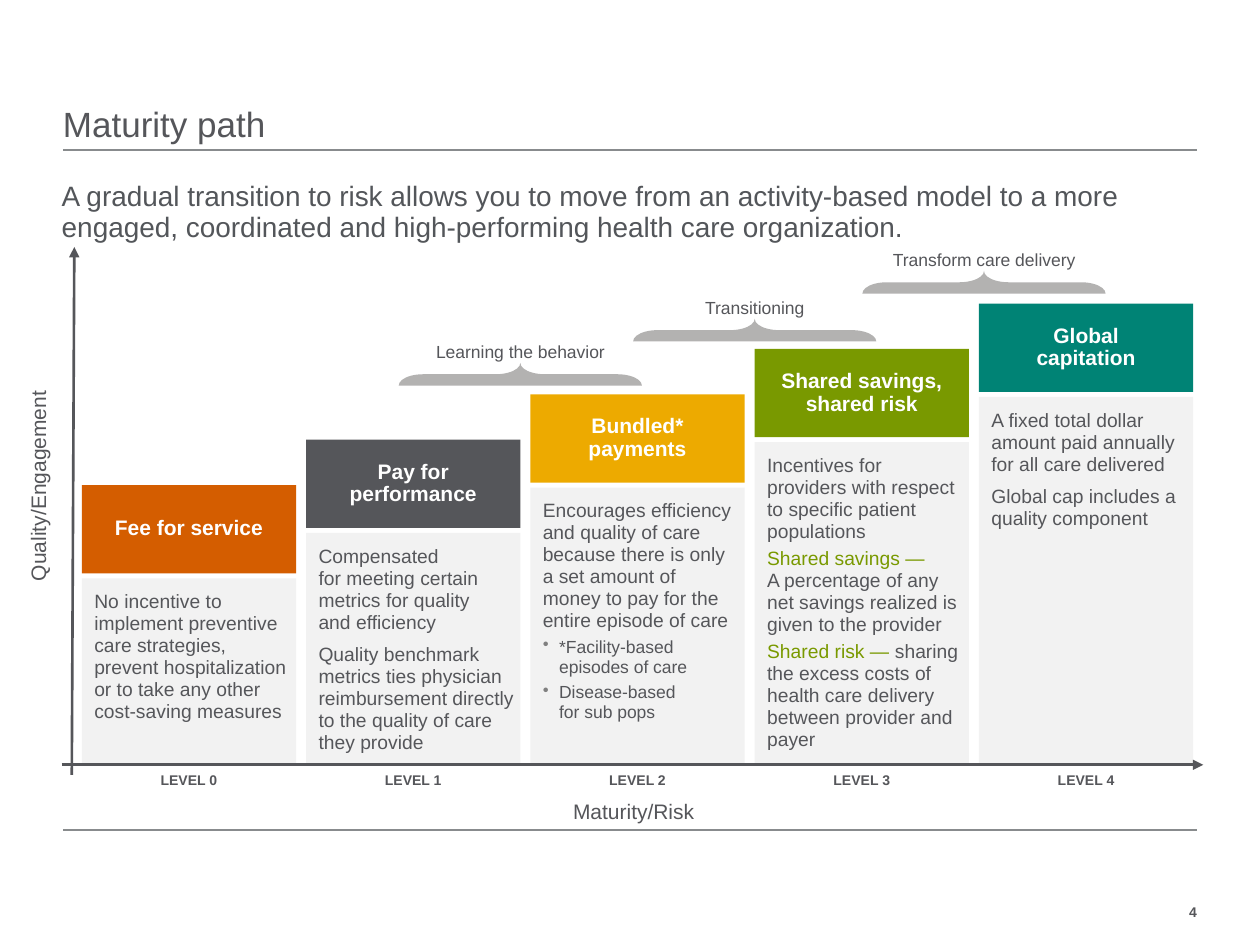
from pptx import Presentation
from pptx.dml.color import RGBColor
from pptx.enum.shapes import MSO_CONNECTOR as Connector, MSO_SHAPE as Preset
from pptx.enum.text import MSO_ANCHOR as Anchor, PP_ALIGN as Align
from pptx.oxml.ns import qn
from pptx.util import Inches, Pt
from lxml.etree import SubElement

FONT = "Arial"
INK, RULE, PANEL, BRACE, WHITE = "55565A", "888B8D", "F2F2F2", "B3B2B1", "FFFFFF"
BULLET, GREEN = "808080", "799900"

TITLE = "Maturity path"
LEAD = ("A gradual transition to risk allows you to move from an activity-based model "
        "to a more engaged, coordinated and high-performing health care organization.")

# heading lines, colour, body paragraphs as (text, space before, options)
STEPS = [
    (["Fee for service"], "D45D00", [
        ("No incentive to implement preventive care strategies, prevent hospitalization "
         "or to take any other cost-saving measures", 0, {})]),
    (["Pay for performance"], INK, [
        ("Compensated \nfor meeting certain metrics for quality \nand efficiency", 0, {}),
        ("Quality benchmark metrics ties physician reimbursement directly "
         "to the quality of care they provide", 6, {})]),
    (["Bundled* payments"], "EDAA00", [
        ("Encourages efficiency and quality of care because there is only a set amount "
         "of money to pay for the entire episode of care", 0, {}),
        ("*Facility-based episodes of care", 3, {"bullet": True}),
        ("Disease-based \nfor sub pops", 3, {"bullet": True})]),
    (["Shared savings,", "shared risk"], GREEN, [
        ("Incentives for providers with respect to specific patient populations", 0, {}),
        ("\nA percentage of any net savings realized is given to the provider", 3,
         {"lead": "Shared savings — "}),
        ("sharing the excess costs of health care delivery between provider and payer", 3,
         {"lead": "Shared risk — "})]),
    (["Global", "capitation"], "008375", [
        ("A fixed total dollar amount paid annually for all care delivered", 0, {}),
        ("Global cap includes a quality component", 6, {})]),
]
# label, centre of the brace
PHASES = [("Learning the behavior", 4.13, 2.97),
          ("Transitioning", 5.99, 2.62),
          ("Transform care delivery", 7.81, 2.24)]

LEFT, PITCH, WIDTH = 0.65, 1.78, 1.7
FIRST_TOP, RISE, HEAD_HEIGHT, GAP = 3.85, 0.36, 0.7, 0.04
BASE = 6.07
BRACE_LENGTH, BRACE_DEPTH = 1.93, 0.18


def rgb(value):
    return RGBColor.from_string(value)


def style(paragraph, size, color=INK, bold=False, align=Align.LEFT, spacing=1.0):
    paragraph.alignment = align
    paragraph.line_spacing = spacing
    font = paragraph.font
    font.name, font.size, font.bold = FONT, Pt(size), bold
    font.color.rgb = rgb(color)


def set_frame(shape, insets, anchor=Anchor.TOP, wrap=True):
    frame = shape.text_frame
    frame.word_wrap = wrap
    frame.vertical_anchor = anchor
    (frame.margin_left, frame.margin_top,
     frame.margin_right, frame.margin_bottom) = map(Inches, insets)
    return frame


def add_text(slide, box, lines, size, insets=(0, 0, 0, 0), anchor=Anchor.TOP, wrap=True, **look):
    shape = slide.shapes.add_textbox(*map(Inches, box))
    write_lines(set_frame(shape, insets, anchor, wrap), lines, size, **look)
    return shape


def write_lines(frame, lines, size, **look):
    for index, line in enumerate(lines):
        paragraph = frame.add_paragraph() if index else frame.paragraphs[0]
        paragraph.text = line
        style(paragraph, size, **look)


def add_block(slide, preset, box, fill):
    shape = slide.shapes.add_shape(preset, *map(Inches, box))
    shape.shadow.inherit = False
    shape.fill.solid()
    shape.fill.fore_color.rgb = rgb(fill)
    shape.line.fill.background()
    return shape


def add_line(slide, start, end, color, width, arrow=False):
    line = slide.shapes.add_connector(Connector.STRAIGHT, *map(Inches, start + end))
    line.line.color.rgb = rgb(color)
    line.line.width = Pt(width)
    properties = line._element.spPr
    if arrow:
        SubElement(properties.find(qn("a:ln")), qn("a:tailEnd"), type="triangle")
    SubElement(properties, qn("a:effectLst"))


def add_bullet(paragraph):
    properties = paragraph._p.get_or_add_pPr()
    indent = Inches(0.13)
    properties.set("marL", str(indent))
    properties.set("indent", str(-indent))
    color = SubElement(properties, qn("a:buClr"))
    SubElement(color, qn("a:srgbClr"), val=BULLET)
    SubElement(properties, qn("a:buChar"), char="•")


def write_body(frame, body):
    for index, (text, before, options) in enumerate(body):
        paragraph = frame.add_paragraph() if index else frame.paragraphs[0]
        bulleted = "bullet" in options
        if bulleted:
            add_bullet(paragraph)
        if "lead" in options:
            run = paragraph.add_run()
            run.text = options["lead"]
            run.font.color.rgb = rgb(GREEN)
        for number, line in enumerate(text.split("\n")):
            if number:
                paragraph.add_line_break()
            if line:
                paragraph.add_run().text = line
        paragraph.space_before = Pt(before)
        style(paragraph, 10 if bulleted else 11, spacing=0.95)


def add_step(slide, level, heading, color, body):
    left = LEFT + level * PITCH
    top = FIRST_TOP - level * RISE
    panel_top = top + HEAD_HEIGHT + GAP

    panel = add_block(slide, Preset.RECTANGLE, (left, panel_top, WIDTH, BASE - panel_top), PANEL)
    write_body(set_frame(panel, (0.1, 0.1, 0.05, 0)), body)

    head = add_block(slide, Preset.ROUNDED_RECTANGLE, (left, top, WIDTH, HEAD_HEIGHT), color)
    head.adjustments[0] = 0
    write_lines(set_frame(head, (0.1, 0, 0.1, 0), Anchor.MIDDLE), heading, 12,
                color=WHITE, bold=True, align=Align.CENTER, spacing=0.9)

    add_text(slide, (left, BASE, WIDTH, 0.25), [f"LEVEL {level}"], 8,
             insets=(0, 0.05, 0, 0), bold=True, align=Align.CENTER)


def add_phase(slide, label, center, middle):
    brace = add_block(slide, Preset.RIGHT_BRACE,
                      (center - BRACE_DEPTH / 2, middle - BRACE_LENGTH / 2,
                       BRACE_DEPTH, BRACE_LENGTH), BRACE)
    brace.rotation = 270
    brace.adjustments[0], brace.adjustments[1] = 1.08, 0.5
    add_text(slide, (center - BRACE_LENGTH / 2, middle - 0.31, BRACE_LENGTH, 0.27), [label], 10,
             insets=(0.1, 0.05, 0.1, 0.05), align=Align.CENTER)


def main():
    presentation = Presentation()
    presentation.slide_width, presentation.slide_height = Inches(10), Inches(7.5)
    slide = presentation.slides.add_slide(presentation.slide_layouts[6])

    add_text(slide, (9, 7.12, 0.5, 0.23), ["4"], 8, anchor=Anchor.MIDDLE,
             bold=True, align=Align.RIGHT)
    for height in (1.19, 6.59):
        add_line(slide, (0.5, height), (9.5, height), RULE, 1)
    add_text(slide, (0.5, 0.78, 9, 0.44), [TITLE], 20, anchor=Anchor.MIDDLE, spacing=0.9)
    add_text(slide, (0.49, 1.45, 9, 0.59), [LEAD], 16, color="53565A", spacing=0.9)

    for level, step in enumerate(STEPS):
        add_step(slide, level, *step)
    for phase in PHASES:
        add_phase(slide, *phase)

    padding = (0.1, 0.05, 0.1, 0.05)
    add_text(slide, (4.21, 6.29, 1.64, 0.3), ["Maturity/Risk"], 12,
             insets=padding, align=Align.CENTER)
    vertical = add_text(slide, (0.15, 3.09, 0.4, 1.62), ["Quality/Engagement"], 12,
                        insets=padding, wrap=False)
    vertical._element.txBody.bodyPr.set("vert", "vert270")
    add_line(slide, (0.57, 6.15), (0.59, 1.96), INK, 1.5, arrow=True)
    add_line(slide, (0.49, BASE), (9.55, BASE), INK, 1.5, arrow=True)

    presentation.save("out.pptx")


if __name__ == "__main__":
    main()
